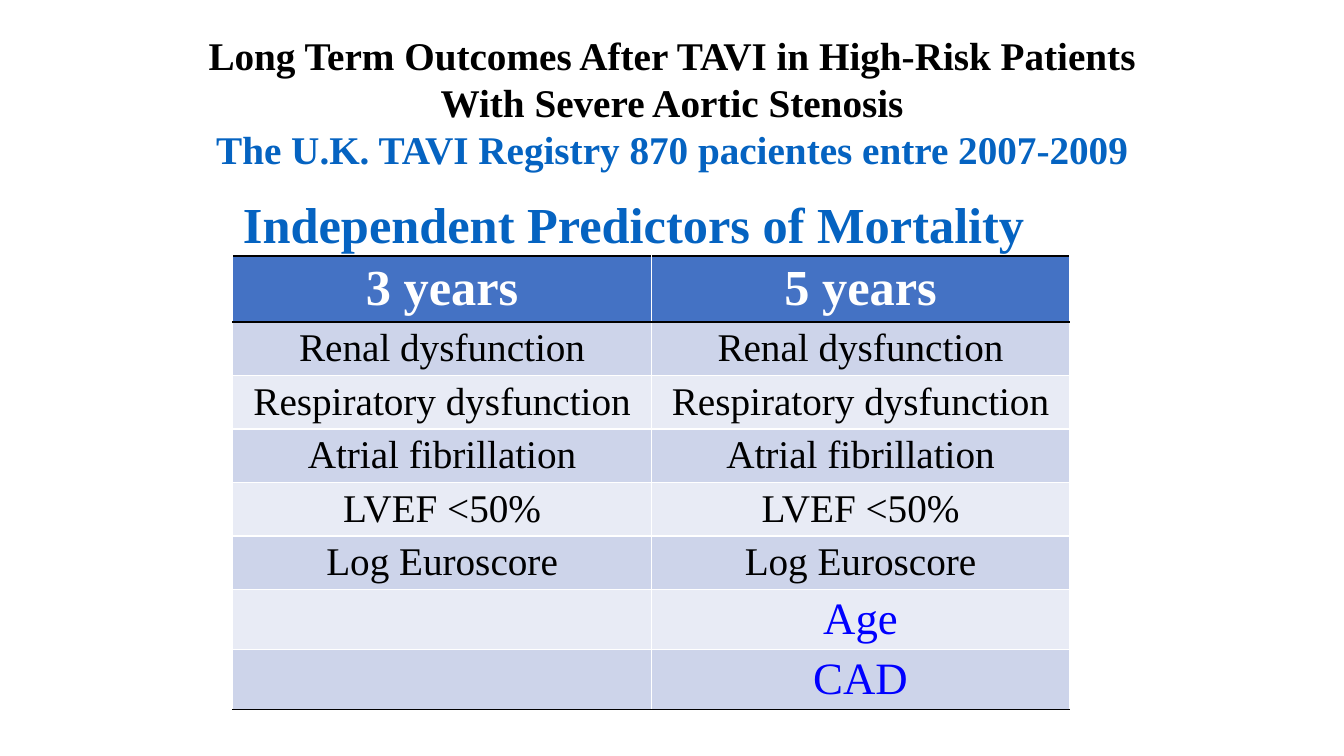
import pptx
import pptx.util
import pptx.dml.color
import pptx.enum.text
import pptx.oxml.ns
import lxml.etree
from dataclasses import dataclass

Inches = pptx.util.Inches
Align = pptx.enum.text.PP_ALIGN
Anchor = pptx.enum.text.MSO_ANCHOR


@dataclass(frozen=True)
class Theme:
    """Colours, font and type sizes of the slide."""
    font: str = "Times New Roman"
    black: str = "000000"
    white: str = "FFFFFF"
    blue: str = "0563C1"
    vivid: str = "0000FF"
    head: str = "4472C4"
    bands: tuple = ("CDD4EA", "E8EBF5")
    large: int = 36
    medium: int = 32
    body: int = 28
    inset: float = 0.05


THEME = Theme()
SHARED = ["Renal dysfunction", "Respiratory dysfunction", "Atrial fibrillation",
          "LVEF <50%", "Log Euroscore"]
ROWS = [("3 years", "5 years"), *((name, name) for name in SHARED),
        ("", "Age"), ("", "CAD")]
HEIGHTS = [0.65] + [0.53] * len(SHARED) + [0.59] * 2


def rgb(color):
    """Turn a hex string into a colour."""
    return pptx.dml.color.RGBColor.from_string(color)


def style(para, size, color, bold=False, align=Align.CENTER):
    """Format one paragraph."""
    para.alignment = align
    para.font.name = THEME.font
    para.font.size = pptx.util.Pt(size)
    para.font.bold = bold
    para.font.color.rgb = rgb(color)


def pad(item):
    """Set equal margins on a text frame or a cell."""
    for side in ("left", "right", "top", "bottom"):
        setattr(item, "margin_" + side, Inches(THEME.inset))


def edge(cell, side, color):
    """Draw one border of a cell."""
    qn = pptx.oxml.ns.qn
    props = cell._tc.get_or_add_tcPr()
    line = lxml.etree.SubElement(props, qn("a:ln" + side), w="12700")
    fill = lxml.etree.SubElement(line, qn("a:solidFill"))
    lxml.etree.SubElement(fill, qn("a:srgbClr"), val=color)


def add_title(slide, left, top, width, height):
    """Place the title above the table."""
    title = slide.shapes.title
    title.left, title.top = Inches(left), Inches(top)
    title.width, title.height = Inches(width), Inches(height)
    frame = title.text_frame
    frame.text = "Independent Predictors of Mortality"
    frame.word_wrap = True
    frame.auto_size = pptx.enum.text.MSO_AUTO_SIZE.NONE
    frame.vertical_anchor = Anchor.MIDDLE
    pad(frame)
    para = frame.paragraphs[0]
    para.line_spacing = 0.9
    style(para, THEME.large, THEME.blue, True, Align.LEFT)


def add_study(slide, left, top, width, height):
    """Place the study name and its registry."""
    box = slide.shapes.add_textbox(
        Inches(left), Inches(top), Inches(width), Inches(height))
    frame = box.text_frame
    frame.word_wrap = True
    pad(frame)
    frame.text = ("Long Term Outcomes After TAVI in High-Risk Patients "
                  "With Severe Aortic Stenosis\n"
                  "The U.K. TAVI Registry 870 pacientes entre 2007-2009")
    for para, color in zip(frame.paragraphs, (THEME.black, THEME.blue)):
        style(para, THEME.body, color, True)


def fill_cell(cell, text, row):
    """Write and format one cell by its row."""
    last = len(ROWS) - 1
    pad(cell)
    top = THEME.black if row < 2 else THEME.white
    base = THEME.black if row in (0, last) else THEME.white
    for side, color in zip("LRTB", (THEME.white, THEME.white, top, base)):
        edge(cell, side, color)
    cell.fill.solid()
    cell.fill.fore_color.rgb = rgb(
        THEME.bands[(row - 1) % 2] if row else THEME.head)
    cell.text = text
    if row == 0:
        look = (THEME.large, THEME.white, True)
    elif row <= len(SHARED):
        look = (THEME.body, THEME.black)
    else:
        look = (THEME.medium, THEME.vivid)
    style(cell.text_frame.paragraphs[0], *look)


def add_grid(slide, left, top, width):
    """Place the table of predictors."""
    count = len(ROWS[0])
    table = slide.shapes.add_table(
        len(ROWS), count, Inches(left), Inches(top),
        Inches(width), Inches(sum(HEIGHTS))).table
    for column in table.columns:
        column.width = Inches(width / count)
    for row, (texts, height) in enumerate(zip(ROWS, HEIGHTS)):
        table.rows[row].height = Inches(height)
        for col, text in enumerate(texts):
            fill_cell(table.cell(row, col), text, row)


def main():
    """Build and save the slide."""
    deck = pptx.Presentation()
    deck.slide_width, deck.slide_height = Inches(13.33), Inches(7.5)
    slide = deck.slides.add_slide(deck.slide_layouts[5])
    add_title(slide, 2.36, 1.63, 8.9, 1.25)
    add_grid(slide, 2.31, 2.54, 8.3)
    add_study(slide, 1.84, 0.26, 9.65, 1.42)
    deck.save("out.pptx")


if __name__ == "__main__":
    main()
